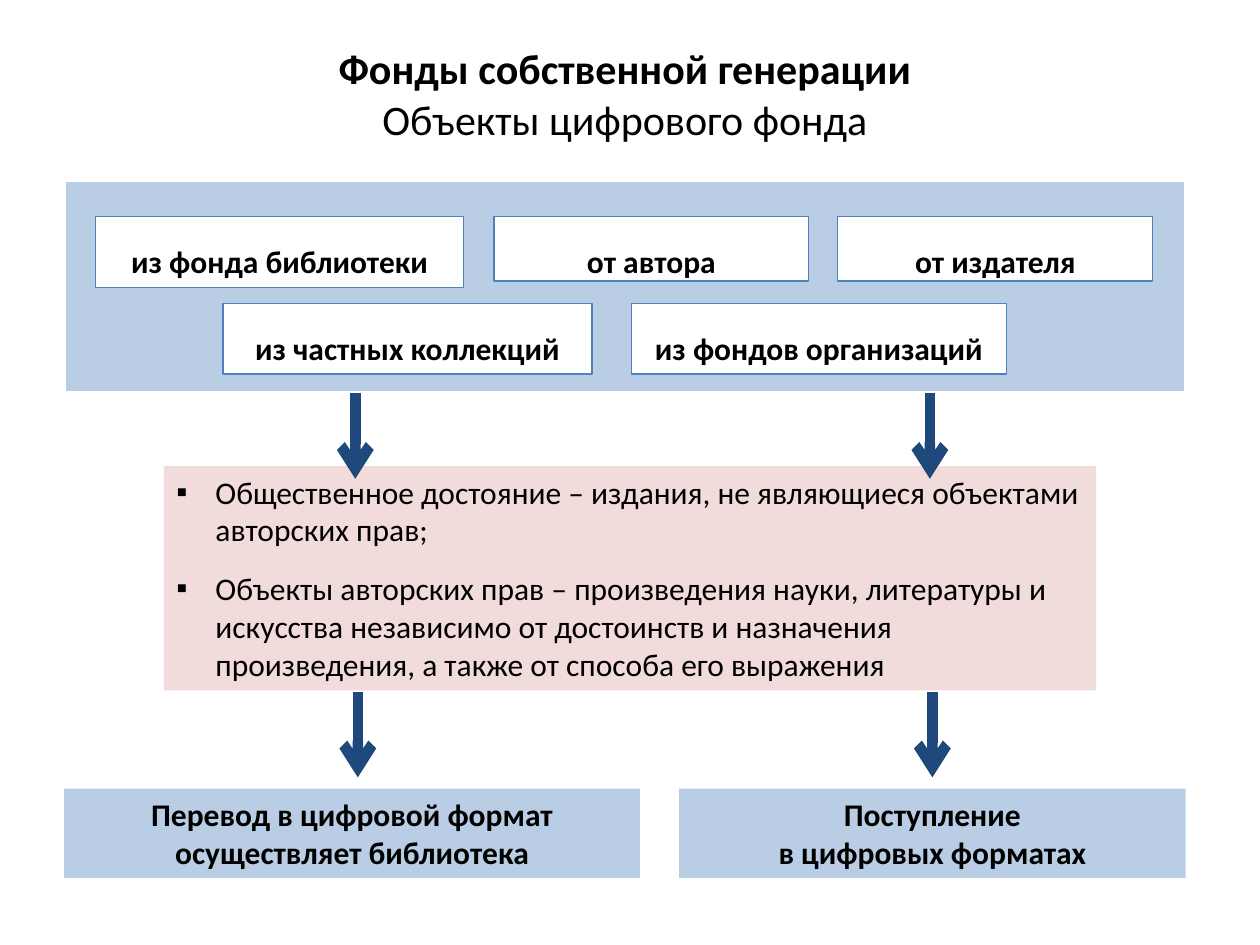
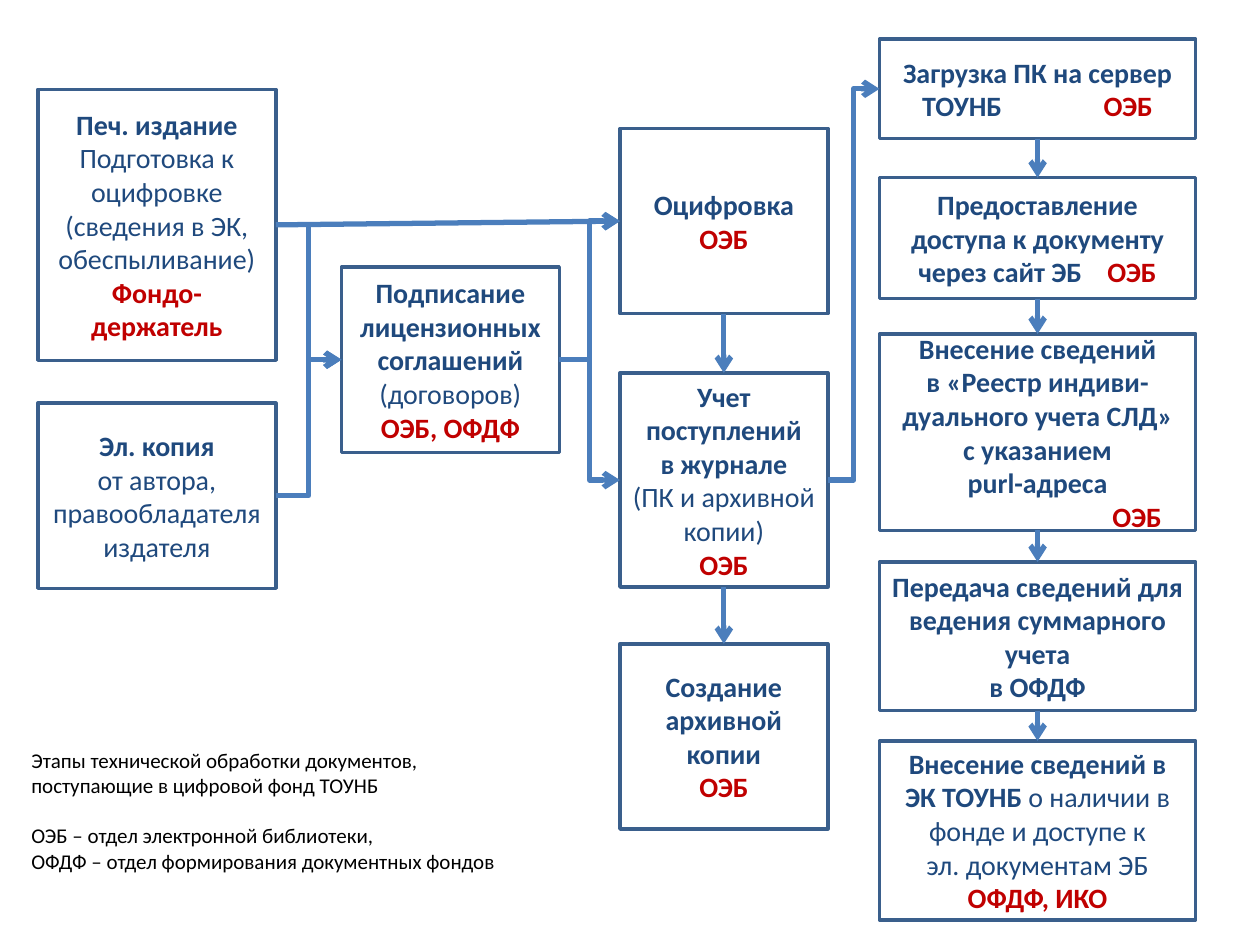
from itertools import pairwise

from lxml import etree
from pptx import Presentation
from pptx.dml.color import RGBColor
from pptx.enum.shapes import MSO_CONNECTOR, MSO_SHAPE
from pptx.enum.text import MSO_ANCHOR, MSO_AUTO_SIZE, PP_ALIGN
from pptx.oxml.ns import qn
from pptx.util import Inches, Pt

RECT = MSO_SHAPE.RECTANGLE
STRAIGHT, ELBOW = MSO_CONNECTOR.STRAIGHT, MSO_CONNECTOR.ELBOW
TOP_ANCHOR, MIDDLE = MSO_ANCHOR.TOP, MSO_ANCHOR.MIDDLE
NO_AUTOFIT = MSO_AUTO_SIZE.NONE
LEFT_ALIGN, CENTER = PP_ALIGN.LEFT, PP_ALIGN.CENTER
TOP, LEFT, BOTTOM, RIGHT = range(4)
TITLE_AND_CONTENT, BLANK = 1, 6

FONT = "Calibri"
COLORS = {
    "ink": "000000", "white": "FFFFFF", "blue": "B9CDE5", "pink": "F2DCDB",
    "label": "4F81BD", "navy": "1F497D", "frame": "3A5F8C", "link": "4B7EBC",
    "owner": "C00000",
}
STYLES = {
    "heading": ("ink", {"size": Pt(24), "bold": True}),
    "subheading": ("ink", {"size": Pt(24), "bold": False}),
    "label": ("ink", {"size": Pt(18), "bold": True}),
    "list": ("ink", {"size": Pt(18), "bold": False}),
    "caption": ("ink", {"size": Pt(12), "bold": False}),
    "step": ("navy", {"size": Pt(16), "bold": True}),
    "detail": ("navy", {"size": Pt(16), "bold": False}),
    "owner": ("owner", {"size": Pt(16), "bold": True}),
}


def color(name):
    """Return a palette colour."""
    return RGBColor.from_string(COLORS[name])


def apply(target, formats):
    """Set every attribute named in a dict of format values."""
    for attribute, value in formats.items():
        setattr(target, attribute, value)


def place(shape, box):
    """Move a shape to a box given in inches."""
    apply(shape, dict(zip(("left", "top", "width", "height"), map(Inches, box))))


def set_tabs(paragraph, stops):
    """Add left tab stops, given in inches."""
    tab_list = etree.SubElement(paragraph._p.get_or_add_pPr(), qn("a:tabLst"))
    for stop in stops:
        etree.SubElement(tab_list, qn("a:tab"), pos=str(Inches(stop)), algn="l")


def write(frame, paragraphs, anchor=TOP_ANCHOR, **formats):
    """Fill a text frame with paragraphs of (text, style, tab stops) runs."""
    apply(frame, {"word_wrap": True, "auto_size": NO_AUTOFIT, "vertical_anchor": anchor})
    for index, runs in enumerate(paragraphs):
        paragraph = frame.add_paragraph() if index else frame.paragraphs[0]
        apply(paragraph, formats)
        for text, style, *stops in runs:
            if stops:
                set_tabs(paragraph, stops)
            for number, line in enumerate(text.split("\n")):
                if number:
                    paragraph.add_line_break()
                run = paragraph.add_run()
                run.text = line
                ink, font_formats = STYLES[style]
                apply(run.font, {"name": FONT, **font_formats})
                run.font.color.rgb = color(ink)


def add_box(slide, box, fill=None, outline=None, weight=0):
    """Add a plain rectangle."""
    shape = slide.shapes.add_shape(RECT, *map(Inches, box))
    shape.shadow.inherit = False
    if fill:
        shape.fill.solid()
        shape.fill.fore_color.rgb = color(fill)
    else:
        shape.fill.background()
    if outline:
        shape.line.color.rgb = color(outline)
        shape.line.width = Pt(weight)
    else:
        shape.line.fill.background()
    return shape


def add_arrow(slide, kind, ends, ink, weight):
    """Add a connector with an open arrowhead at its end."""
    arrow = slide.shapes.add_connector(kind, *map(Inches, ends))
    arrow.line.color.rgb = color(ink)
    arrow.line.width = Pt(weight)
    etree.SubElement(arrow.line._get_or_add_ln(), qn("a:tailEnd"), type="arrow")
    etree.SubElement(arrow._element.spPr, qn("a:effectLst"))
    return arrow


def join(slide, start, start_side, finish, finish_side, kind=STRAIGHT):
    """Join the sides of two steps with an arrow."""
    arrow = add_arrow(slide, kind, (0, 0, 1, 1), "link", 3)
    arrow.begin_connect(start, start_side)
    arrow.end_connect(finish, finish_side)


def add_sources(slide, box):
    """Draw the panel with the sources of the collection."""
    left, top, _, _ = box
    add_box(slide, box, "blue", "white", 2)
    sources = [
        (0.25, 0.29, 2.92, 0.56, "из фонда библиотеки"),
        (3.41, 0.29, 2.5, 0.51, "от автора"),
        (6.14, 0.29, 2.5, 0.51, "от издателя"),
        (1.26, 0.98, 2.93, 0.56, "из частных коллекций"),
        (4.5, 0.98, 2.98, 0.56, "из фондов организаций"),
    ]
    for dx, dy, width, height, name in sources:
        source = add_box(slide, (left + dx, top + dy, width, height), "white", "label", 0.75)
        write(source.text_frame, [[(name, "label")]], alignment=CENTER, line_spacing=1.5)


def add_rights_list(slide, box):
    """Fill the body placeholder with the two kinds of legal status."""
    body = slide.placeholders[1]
    place(body, box)
    body.fill.solid()
    body.fill.fore_color.rgb = color("pink")
    write(body.text_frame, [
        [("Общественное достояние – издания, не являющиеся объектами авторских прав;", "list")],
        [("Объекты авторских прав – произведения науки, литературы и искусства "
          "независимо от достоинств и назначения произведения, а также от способа "
          "его выражения", "list")],
    ], alignment=LEFT_ALIGN, space_before=Pt(0), space_after=Pt(12))
    indent = Inches(0.31)
    for paragraph in body.text_frame.paragraphs:
        properties = paragraph._p.get_or_add_pPr()
        properties.set("marL", str(indent))
        properties.set("indent", str(-indent))
        etree.SubElement(properties, qn("a:buFont"), typeface="Arial")
        etree.SubElement(properties, qn("a:buChar"), char="▪")


def add_down_arrows(slide, left, top):
    """Draw a pair of thick arrows pointing down."""
    for x in (left, left + 4.56):
        add_arrow(slide, STRAIGHT, (x, top, x, top + 0.68), "navy", 6)


def add_routes(slide, box):
    """Draw the two ways into the digital collection."""
    left, top, width, height = box
    routes = [
        (0, 4.57, "Перевод в цифровой формат осуществляет библиотека"),
        (width - 4.02, 4.02, "Поступление\nв цифровых форматах"),
    ]
    for dx, route_width, text in routes:
        route = add_box(slide, (left + dx, top, route_width, height), "blue")
        write(route.text_frame, [[(text, "label")]], alignment=CENTER)


def build_objects_slide(deck):
    """Build the slide on the objects of the digital collection."""
    slide = deck.slides.add_slide(deck.slide_layouts[TITLE_AND_CONTENT])
    place(slide.shapes.title, (0.51, 0.29, 8.9, 0.91))
    write(slide.shapes.title.text_frame, [
        [("Фонды собственной генерации", "heading")],
        [("Объекты цифрового фонда", "subheading")],
    ], alignment=CENTER)
    add_sources(slide, (0.51, 1.43, 8.9, 1.69))
    add_rights_list(slide, (1.3, 3.7, 7.4, 1.78))
    add_routes(slide, (0.51, 6.26, 8.9, 0.71))
    add_down_arrows(slide, 2.82, 3.12)
    add_down_arrows(slide, 2.84, 5.49)


def add_steps(slide, left, width, steps, chained=False):
    """Draw a column of steps and, if chained, the arrows between them."""
    boxes = []
    for top, height, paragraphs in steps:
        step = add_box(slide, (left, top, width, height), outline="frame", weight=2)
        write(step.text_frame, paragraphs, MIDDLE, alignment=CENTER)
        boxes.append(step)
    if chained:
        for upper, lower in pairwise(boxes):
            join(slide, upper, BOTTOM, lower, TOP)
    return boxes


def add_tabbed_line(*parts):
    """Return runs that each start at their own tab stop."""
    stops = [stop for _, _, stop in parts]
    runs = [("\t" + text, style) for text, style, _ in parts]
    return [(*runs[0], *stops), *runs[1:]]


def add_caption(slide, box):
    """Write the caption and the key to the abbreviations."""
    caption = slide.shapes.add_textbox(*map(Inches, box)).text_frame
    write(caption, [
        [("Этапы технической обработки документов,\n"
          "поступающие в цифровой фонд ТОУНБ", "caption")],
        [("ОЭБ – отдел электронной библиотеки,\n"
          "ОФДФ – отдел формирования документных фондов", "caption")],
    ])
    caption.paragraphs[1].space_before = Pt(14.5)


def build_workflow_slide(deck):
    """Build the flow chart of document processing."""
    slide = deck.slides.add_slide(deck.slide_layouts[BLANK])
    unit = [("ОЭБ", "owner")]
    printed, digital = add_steps(slide, 0.3, 1.89, [
        (0.71, 2.15, [
            [("Печ. издание", "step")],
            [("Подготовка к оцифровке (сведения в ЭК, обеспыливание)", "detail")],
            [("Фондо-держатель", "owner")]]),
        (3.2, 1.47, [
            [("Эл. копия", "step")],
            [("от автора, правообладателя издателя", "detail")]]),
    ])
    licence, = add_steps(slide, 2.71, 1.73, [
        (2.12, 1.47, [
            [("Подписание лицензионных соглашений ", "step"), ("(договоров)", "detail")],
            [("ОЭБ, ОФДФ", "owner")]]),
    ])
    scanning, register, _ = add_steps(slide, 4.92, 1.65, [
        (1.02, 1.47, [[("Оцифровка", "step")], unit]),
        (2.96, 1.7, [
            [("Учет поступлений\nв журнале", "step")],
            [("(ПК и архивной копии)", "detail")], unit]),
        (5.11, 1.47, [[("Создание архивной копии", "step")], unit]),
    ], chained=True)
    upload, *_ = add_steps(slide, 6.98, 2.51, [
        (0.31, 0.79, [
            [("Загрузка ПК на сервер", "step")],
            add_tabbed_line(("ТОУНБ", "step", 0.24), ("ОЭБ", "owner", 1.68))]),
        (1.41, 0.96, [
            [("Предоставление доступа к документу", "step")],
            add_tabbed_line(("через сайт ЭБ", "step", 0.21), ("ОЭБ", "owner", 1.71))]),
        (2.65, 1.56, [
            [("Внесение сведений\nв «Реестр индиви-дуального учета СЛД»\n"
              "с указанием\npurl-адреса", "step")],
            add_tabbed_line(("ОЭБ", "owner", 1.75))]),
        (4.46, 1.18, [
            [("Передача сведений для ведения суммарного учета\nв ОФДФ", "step")]]),
        (5.88, 1.42, [
            [("Внесение сведений в ЭК ТОУНБ", "step"),
             (" о наличии в фонде и доступе к\nэл. документам ЭБ", "detail")],
            [("ОФДФ, ИКО", "owner")]]),
    ], chained=True)
    for paragraph in (p for box in slide.shapes if box.has_text_frame
                      for p in box.text_frame.paragraphs if "\t" in p.text):
        paragraph.alignment = LEFT_ALIGN
    join(slide, printed, RIGHT, scanning, LEFT)
    for start, finish in [(digital, licence), (printed, licence), (licence, scanning),
                          (licence, register), (register, upload)]:
        join(slide, start, RIGHT, finish, LEFT, ELBOW)
    add_caption(slide, (0.15, 5.88, 4.15, 1.11))


def main():
    """Build and save the presentation."""
    deck = Presentation()
    deck.slide_width, deck.slide_height = Inches(10), Inches(7.5)
    build_objects_slide(deck)
    build_workflow_slide(deck)
    deck.save("out.pptx")


if __name__ == "__main__":
    main()
